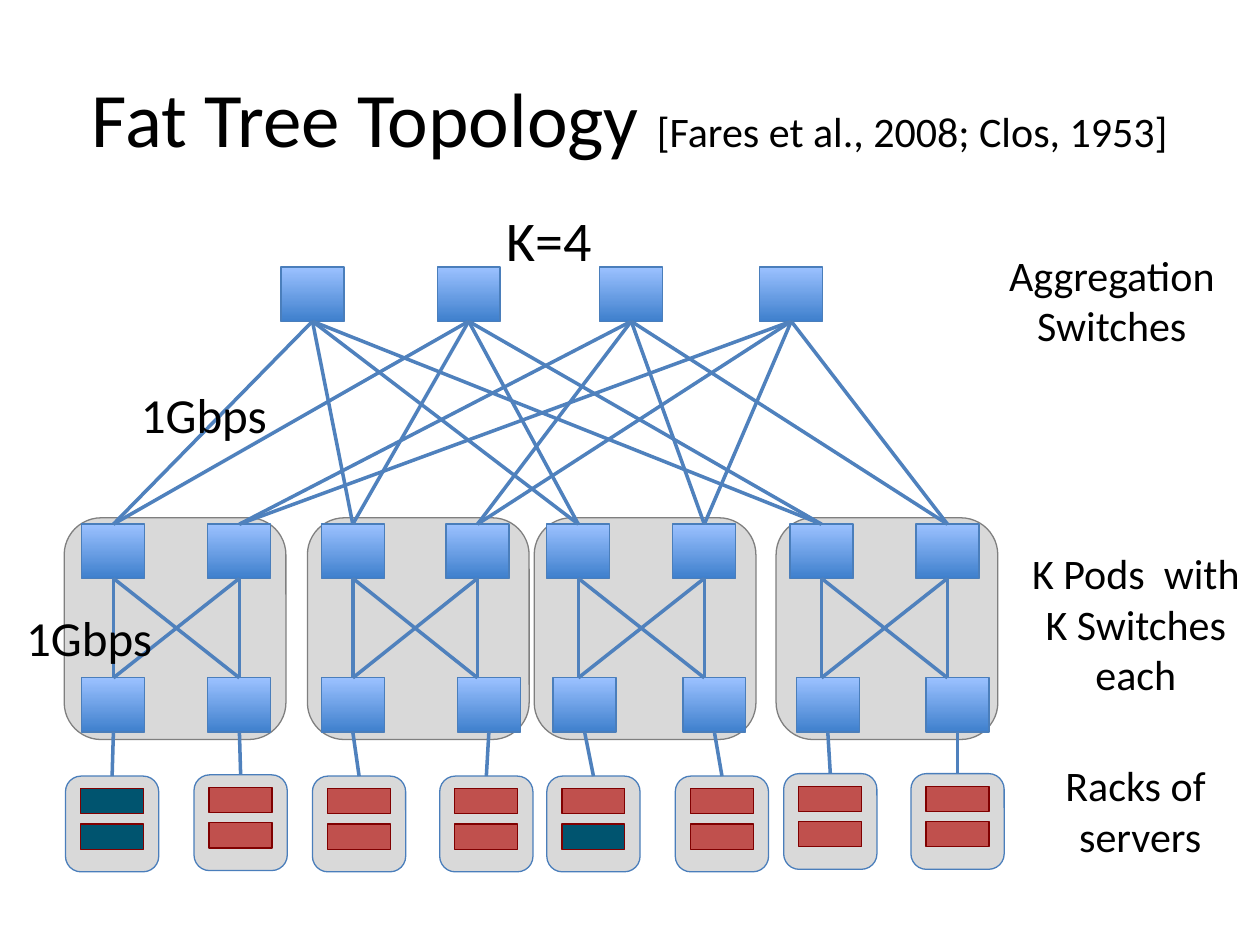
"""Builds a slide showing a fat tree network of switches and server racks."""
from pptx import Presentation
from pptx import util as u
from pptx.dml import color
from pptx.enum import shapes, text
from pptx.oxml import ns
from lxml import etree

COLORS = {
    "black": "000000", "pod": "D9D9D9", "pod_edge": "7F7F7F",
    "switch_top": "9BC1FF", "switch_bottom": "3F80CD", "edge": "4A7EBB",
    "link": "4F81BD", "server": "C0504D", "marked": "00546F",
    "server_edge": "800000",
}
RGB = {name: color.RGBColor.from_string(value) for name, value in COLORS.items()}
RECT = shapes.MSO_SHAPE.RECTANGLE
ROUND = shapes.MSO_SHAPE.ROUNDED_RECTANGLE

deck = Presentation()
deck.slide_width, deck.slide_height = u.Inches(10), u.Inches(7.5)
page = deck.slides.add_slide(deck.slide_layouts[6])


def add_block(kind, bounds, fill, edge):
    block = page.shapes.add_shape(kind, *map(u.Inches, bounds))
    block.shadow.inherit = False
    if fill == "switch":
        block.fill.gradient()
        block.fill.gradient_angle = 270
        for stop, name in zip(block.fill.gradient_stops, ("switch_top", "switch_bottom")):
            stop.color.rgb = RGB[name]
    else:
        block.fill.solid()
        block.fill.fore_color.rgb = RGB[fill]
    block.line.color.rgb = RGB[edge]
    block.line.width = u.Pt(0.75)


def add_link(start, end):
    link = page.shapes.add_connector(
        shapes.MSO_CONNECTOR.STRAIGHT, *map(u.Inches, (*start, *end)))
    link.line.color.rgb = RGB["link"]
    link.line.width = u.Pt(2)
    etree.SubElement(link._element.spPr, ns.qn("a:effectLst"))


SWITCH_W, SWITCH_H = 0.5, 0.43
HALF = SWITCH_W / 2
CORE_TOP, UPPER_TOP, LOWER_TOP = 2.12, 4.16, 5.38
CORE_BASE, UPPER_BASE, LOWER_BASE = (
    top + SWITCH_H for top in (CORE_TOP, UPPER_TOP, LOWER_TOP))

pods = [0.51, 2.44, 4.24, 6.16]
core = [2.23, 3.47, 4.76, 6.03]
upper = [0.65, 1.65, 2.55, 3.54, 4.34, 5.34, 6.27, 7.27]
lower = [0.65, 1.65, 2.55, 3.63, 4.39, 5.42, 6.32, 7.35]
racks = [(0.52, 6.16), (1.54, 6.15), (2.48, 6.16), (3.49, 6.16),
         (4.34, 6.16), (5.36, 6.16), (6.22, 6.14), (7.23, 6.14)]
marked_servers = {(0, 0), (0, 1), (4, 1)}

for left in pods:
    add_block(ROUND, (left, 4.11, 1.76, 1.76), "pod", "pod_edge")

for lefts, top in ((core, CORE_TOP), (upper, UPPER_TOP), (lower, LOWER_TOP)):
    for left in lefts:
        add_block(RECT, (left, top, SWITCH_W, SWITCH_H), "switch", "edge")

for index, left in enumerate(upper):
    center = left + HALF
    side = index % 2
    for core_left in core[2 * side:2 * side + 2]:
        add_link((center, UPPER_TOP), (core_left + HALF, CORE_BASE))
    first = index - side
    for pod_left in upper[first:first + 2]:
        add_link((pod_left + HALF, LOWER_TOP), (center, UPPER_BASE))

for index, (left, top) in enumerate(racks):
    add_block(ROUND, (left, top, 0.74, 0.76), "pod", "edge")
    for row in range(2):
        fill = "marked" if (index, row) in marked_servers else "server"
        add_block(RECT, (left + 0.12, top + 0.1 + 0.28 * row, 0.5, 0.2),
                  fill, "server_edge")
    add_link((left + 0.37, top), (lower[index] + HALF, LOWER_BASE))

CENTER, LEFT = text.PP_ALIGN.CENTER, text.PP_ALIGN.LEFT
MIDDLE, TOP = text.MSO_ANCHOR.MIDDLE, text.MSO_ANCHOR.TOP
labels = [
    ((0.5, 0.3, 9, 1.25),
     [[("Fat Tree Topology ", 44), ("[Fares et al., 2008; Clos, 1953]", 24)]],
     CENTER, {"word_wrap": True, "vertical_anchor": MIDDLE}),
    ((3.92, 1.58, 0.88, 0.63), [[("K=4", 32)]],
     LEFT, {"word_wrap": False, "vertical_anchor": TOP}),
    *[(bounds, [[("1Gbps", 28)]],
       LEFT, {"word_wrap": False, "vertical_anchor": TOP})
      for bounds in ((1.02, 3, 1.21, 0.57), (0.11, 4.77, 1.21, 0.57))],
    *[(bounds, [[(line, 24)] for line in lines],
       CENTER, {"word_wrap": True, "vertical_anchor": TOP})
      for bounds, lines in (
          ((7.61, 1.93, 2.43, 0.9), ["Aggregation Switches"]),
          ((7.8, 4.3, 2.43, 1.3), ["K Pods  with", " K Switches ", "each"]),
          ((7.86, 5.98, 2.38, 0.9), ["Racks of ", "servers"]))],
]
for bounds, lines, align, frame_format in labels:
    box = page.shapes.add_textbox(*map(u.Inches, bounds))
    frame = box.text_frame
    for name, value in frame_format.items():
        setattr(frame, name, value)
    for number, spans in enumerate(lines):
        para = frame.add_paragraph() if number else frame.paragraphs[0]
        para.alignment = align
        for words, size in spans:
            span = para.add_run()
            span.text = words
            span.font.color.rgb = RGB["black"]
            for name, value in {"name": "Calibri", "size": u.Pt(size)}.items():
                setattr(span.font, name, value)

deck.save("out.pptx")
